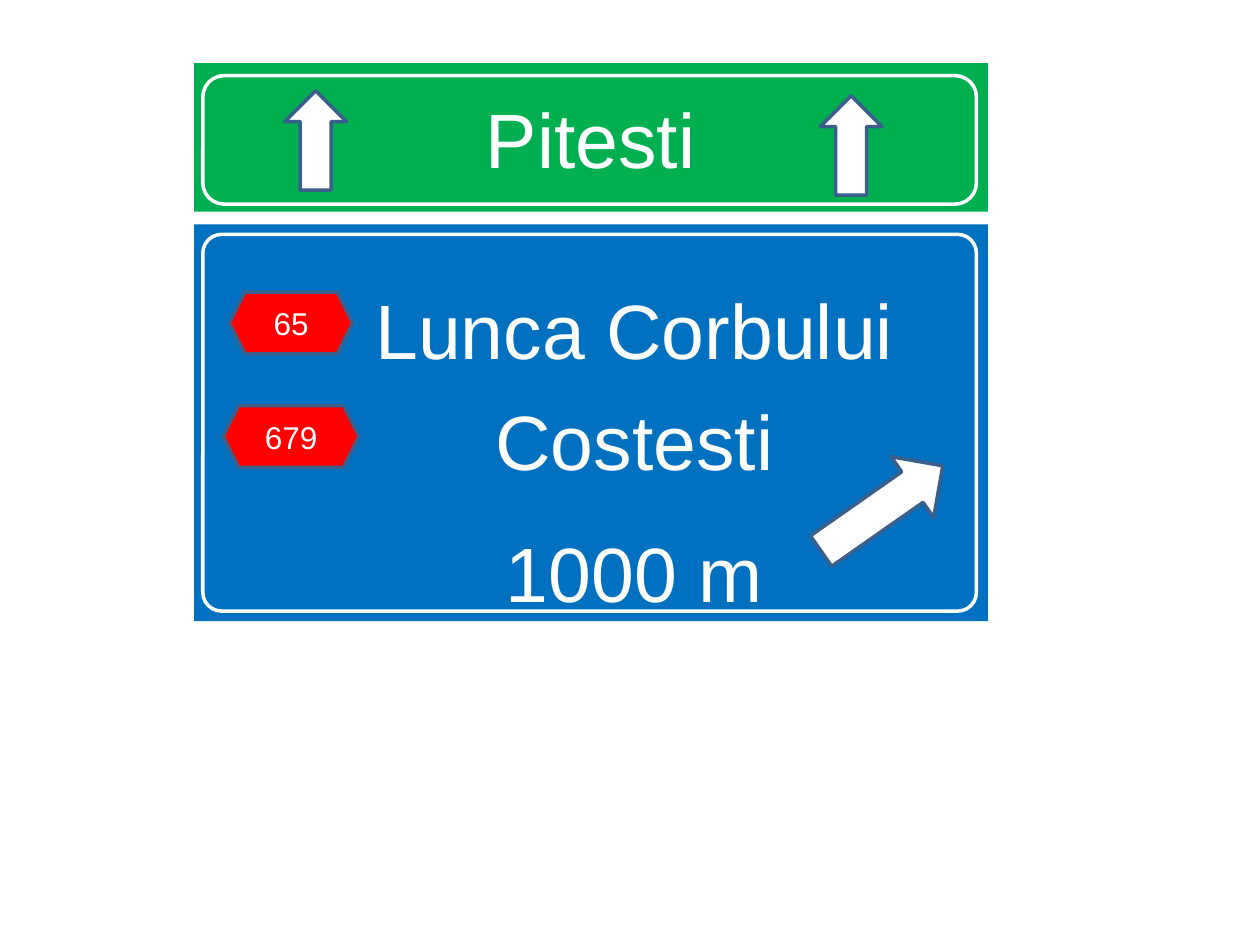
from dataclasses import dataclass
from typing import Optional

from pptx import Presentation
from pptx.dml.color import RGBColor
from pptx.enum.shapes import MSO_SHAPE as Preset
from pptx.enum.text import MSO_ANCHOR as Anchor, MSO_AUTO_SIZE as AutoSize, PP_ALIGN as Align
from pptx.util import Inches, Pt

WIDTH, HEIGHT = Inches(10), Inches(7.5)
COLORS = {
    "green": "00B050",
    "blue": "0070C0",
    "red": "FF0000",
    "white": "FFFFFF",
    "edge": "3A5F8C",
}


@dataclass(frozen=True)
class Box:
    """Position and size in percent of the slide."""
    left: float
    top: float
    width: float
    height: float


@dataclass(frozen=True)
class Mark:
    preset: Preset
    box: Box
    fill: Optional[str] = "white"
    edge: str = "edge"
    label: str = ""
    rotation: float = 0
    corner: Optional[float] = None


@dataclass(frozen=True)
class Line:
    text: str
    space_before: float = 0


PANEL_LEFT, PANEL_WIDTH = 15.4, 63
BORDER_LEFT, BORDER_WIDTH = 16.1, 61.4

MARKS = [
    Mark(Preset.RIGHT_ARROW, Box(64.1, 49.87, 11.8, 7.87), rotation=325),
    Mark(Preset.UP_ARROW, Box(22.6, 9.6, 4.9, 10.53)),
    Mark(Preset.UP_ARROW, Box(65.1, 10.13, 4.9, 10.53)),
    Mark(Preset.HEXAGON, Box(17.7, 42.93, 10.8, 6.53), "red", label="679"),
    Mark(Preset.ROUNDED_RECTANGLE, Box(BORDER_LEFT, 8, BORDER_WIDTH, 13.6), None, "white"),
    Mark(Preset.ROUNDED_RECTANGLE, Box(BORDER_LEFT, 24.8, BORDER_WIDTH, 39.87), None, "white",
         corner=0.05),
    Mark(Preset.HEXAGON, Box(18.2, 30.93, 9.8, 6.53), "red", label="65"),
]


def rgb(name: str) -> RGBColor:
    return RGBColor.from_string(COLORS[name])


def set_all(target, values: dict) -> None:
    for name, value in values.items():
        setattr(target, name, value)


def place(shape, box: Box) -> None:
    set_all(shape, {
        "left": round(WIDTH * box.left / 100),
        "top": round(HEIGHT * box.top / 100),
        "width": round(WIDTH * box.width / 100),
        "height": round(HEIGHT * box.height / 100),
    })


def paint(shape, color: str) -> None:
    shape.fill.solid()
    shape.fill.fore_color.rgb = rgb(color)


def write(shape, lines: list[Line], size: float, frame_format: dict) -> None:
    frame = shape.text_frame
    set_all(frame, {"word_wrap": True, "auto_size": AutoSize.NONE} | frame_format)
    frame.text = "\n".join(line.text for line in lines)
    for paragraph, line in zip(frame.paragraphs, lines):
        set_all(paragraph, {"alignment": Align.CENTER, "space_before": Pt(line.space_before)})
        font = paragraph.runs[0].font
        set_all(font, {"name": "Arial", "size": Pt(size)})
        font.color.rgb = rgb("white")


def fill_panel(panel, box: Box, color: str, lines: list[Line], frame_format: dict) -> None:
    place(panel, box)
    paint(panel, color)
    write(panel, lines, 44, frame_format)


def draw_mark(slide, mark: Mark) -> None:
    shape = slide.shapes.add_shape(mark.preset, 0, 0, 0, 0)
    place(shape, mark.box)
    shape.rotation = mark.rotation
    shape.shadow.inherit = False
    if mark.corner is not None:
        shape.adjustments[0] = mark.corner
    if mark.fill:
        paint(shape, mark.fill)
    else:
        shape.fill.background()
    shape.line.color.rgb = rgb(mark.edge)
    shape.line.width = Pt(2)
    if mark.label:
        write(shape, [Line(mark.label)], 18, {"vertical_anchor": Anchor.MIDDLE})


def main() -> None:
    deck = Presentation()
    set_all(deck, {"slide_width": WIDTH, "slide_height": HEIGHT})
    slide = deck.slides.add_slide(deck.slide_layouts[0])
    ahead, exit_sign = slide.placeholders

    fill_panel(ahead, Box(PANEL_LEFT, 6.67, PANEL_WIDTH, 15.73), "green",
               [Line("Pitesti")], {"vertical_anchor": Anchor.MIDDLE})
    fill_panel(exit_sign, Box(PANEL_LEFT, 23.73, PANEL_WIDTH, 42), "blue",
               [Line("Lunca Corbului"), Line("Costesti", 11), Line("1000 m", 22.5)],
               {"vertical_anchor": Anchor.TOP, "margin_left": Inches(0.79),
                "margin_top": Inches(0.46), "margin_right": Inches(0.1), "margin_bottom": 0})

    for mark in MARKS:
        draw_mark(slide, mark)
    deck.save("out.pptx")


if __name__ == "__main__":
    main()
